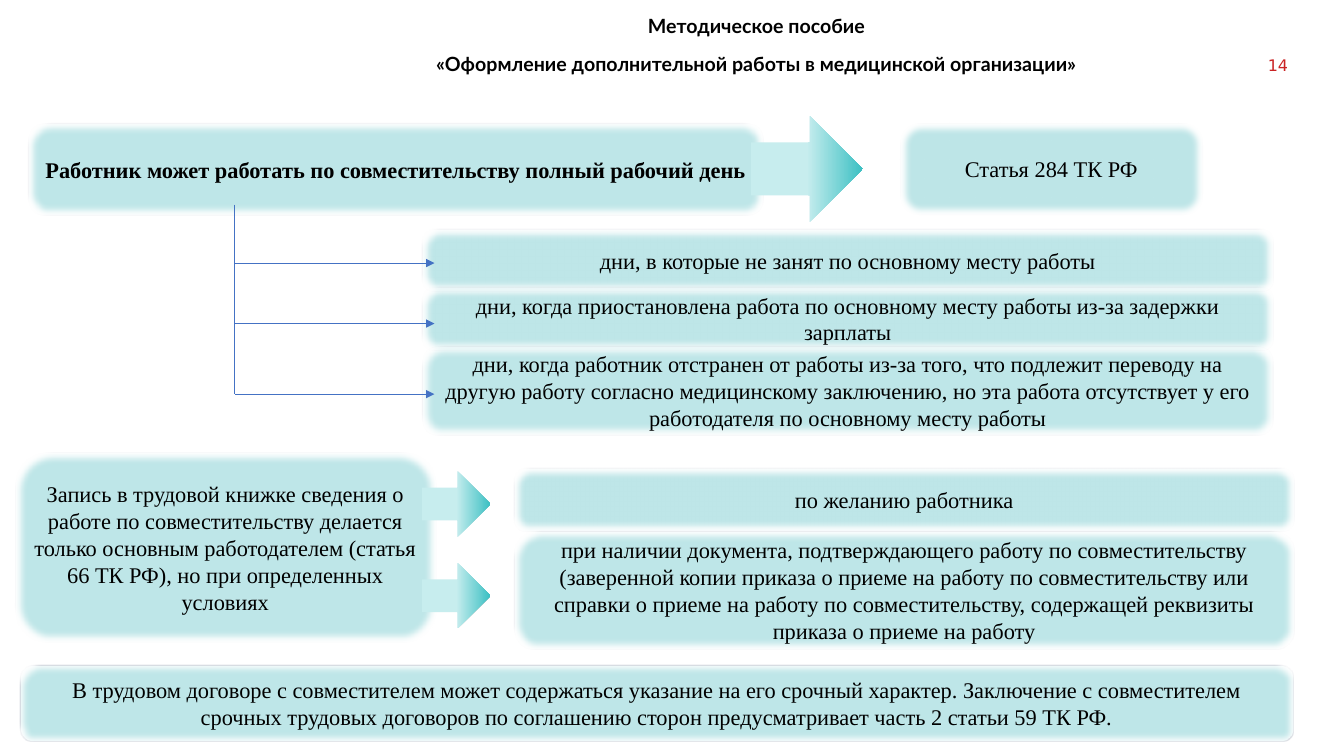
import pptx
import pptx.util
import pptx.dml.color
import pptx.enum.shapes
import pptx.enum.text
import pptx.oxml
import pptx.oxml.ns

Pt = pptx.util.Pt
Shape = pptx.enum.shapes.MSO_SHAPE
Align = pptx.enum.text.PP_ALIGN
Anchor = pptx.enum.text.MSO_ANCHOR
DAYS = [
    (163.44, 44.64, "дни, в которые не занят по основному месту работы"),
    (205.2, 44.64, "дни, когда приостановлена работа по основному месту работы из-за задержки зарплаты"),
    (247.68, 62.64, "дни, когда работник отстранен от работы из-за того, что подлежит переводу на "
     "другую работу согласно медицинскому заключению, но эта работа отсутствует у его "
     "работодателя по основному месту работы"),
]
TERMS = [
    (334.8, 44.64, "по желанию работника"),
    (379.44, 84.24, "при наличии документа, подтверждающего работу по совместительству "
     "(заверенной копии приказа о приеме на работу по совместительству или справки о приеме "
     "на работу по совместительству, содержащей реквизиты приказа о приеме на работу"),
]


def tint(code):
    return pptx.dml.color.RGBColor.from_string(code)


def node(parent, tag, **attrs):
    item = pptx.oxml.parse_xml(f"<a:{tag} {pptx.oxml.ns.nsdecls('a')}/>")
    for key, value in attrs.items():
        item.set(key, str(value))
    parent.append(item)
    return item


def write(frame, text, font="Times New Roman", size=16, color="000000", bold=False,
          align=Align.CENTER, anchor=Anchor.MIDDLE, after=0, lead=1.0, inset=None):
    frame.word_wrap = True
    frame.auto_size = pptx.enum.text.MSO_AUTO_SIZE.NONE
    frame.vertical_anchor = anchor
    if inset is not None:
        frame.margin_left = frame.margin_right = Pt(inset)
        frame.margin_top = frame.margin_bottom = Pt(inset)
    frame.text = text
    for para in frame.paragraphs:
        para.alignment = align
        para.space_before = Pt(0)
        para.space_after = Pt(after)
        para.line_spacing = lead
        for run in para.runs:
            run.font.name = font
            run.font.size = Pt(size)
            run.font.bold = bold
            run.font.color.rgb = tint(color)


class Board:
    """Draws the elements of one slide in a shared style."""

    fill, edge, wire = "BEE6E8", "1E3256", "4472C4"
    light, dark = "C7EDEE", "3BC0C3"

    def __init__(self, deck):
        self.slide = deck.slides.add_slide(deck.slide_layouts[5])
        self.shapes = self.slide.shapes

    def title(self, x, y, w, h, text, **style):
        head = self.shapes.title
        head.left, head.top, head.width, head.height = map(Pt, (x, y, w, h))
        write(head.text_frame, text, **style)

    def label(self, x, y, w, h, text, **style):
        box = self.shapes.add_textbox(*map(Pt, (x, y, w, h)))
        write(box.text_frame, text, **style)

    def panel(self, x, y, w, h, text, **style):
        box = self.shapes.add_shape(Shape.ROUNDED_RECTANGLE, *map(Pt, (x, y, w, h)))
        box.shadow.inherit = False
        box.fill.solid()
        box.fill.fore_color.rgb = tint(self.fill)
        box.line.color.rgb = tint(self.edge)
        box.line.width = Pt(1)
        glow = box._element.spPr.find(pptx.oxml.ns.qn("a:effectLst"))
        node(glow, "softEdge", rad=Pt(5))
        write(box.text_frame, text, **style)

    def arrow(self, x, y, w, h):
        mark = self.shapes.add_shape(Shape.DOWN_ARROW, *map(Pt, (x, y, w, h)))
        mark.shadow.inherit = False
        mark.rotation = 270
        mark.fill.gradient()
        mark.fill.gradient_angle = 270
        stops = zip(mark.fill.gradient_stops, (0.5, 1), (self.light, self.dark))
        for stop, place, code in stops:
            stop.position = place
            stop.color.rgb = tint(code)
        mark.line.fill.background()

    def link(self, x1, y1, x2, y2, tip=False):
        kind = pptx.enum.shapes.MSO_CONNECTOR.STRAIGHT
        line = self.shapes.add_connector(kind, *map(Pt, (x1, y1, x2, y2)))
        line.line.color.rgb = tint(self.wire)
        line.line.width = Pt(0.5)
        if tip:
            node(line.line._get_or_add_ln(), "tailEnd", type="triangle")
        node(line._element.spPr, "effectLst")


def main():
    deck = pptx.Presentation()
    deck.slide_width, deck.slide_height = Pt(960), Pt(540)
    board = Board(deck)
    board.title(222.48, 6.48, 635.76, 51.12,
                "Методическое пособие\n«Оформление дополнительной работы в медицинской организации»",
                font="Lato", size=14, bold=True, anchor=Anchor.TOP, after=10)
    board.label(897.84, 39.6, 22.32, 17.28, "14", font="DejaVu Sans", size=11.4,
                color="CA2324", align=Align.RIGHT, anchor=Anchor.TOP, inset=0)

    board.panel(20.16, 87.84, 524.88, 65.52,
                "Работник может работать по совместительству полный рабочий день",
                bold=True, lead=1.07, after=8)
    board.panel(642.96, 87.84, 216, 65.52, "Статья 284 ТК РФ")
    board.arrow(538.56, 80.64, 75.6, 79.92)

    for y, h, text in DAYS:
        board.panel(301.68, y, 607.68, h, text)
    trunk, ends = 167.76, (187.92, 231.12, 281.52)
    board.link(trunk, 146.16, trunk, ends[-1])
    for y in ends:
        board.link(trunk, y, 310.32, y, tip=True)

    board.panel(10.8, 323.28, 300.24, 135.36,
                "Запись в трудовой книжке сведения о работе по совместительству делается только "
                "основным работодателем (статья 66 ТК РФ), но при определенных условиях")
    for y in (335.52, 401.04):
        board.arrow(302.4, y, 46.8, 48.96)
    for y, h, text in TERMS:
        board.panel(367.2, y, 557.28, h, text)

    board.panel(14.4, 475.2, 909.36, 54,
                "В трудовом договоре с совместителем может содержаться указание на его срочный "
                "характер. Заключение с совместителем срочных трудовых договоров по соглашению "
                "сторон предусматривает часть 2 статьи 59 ТК РФ.")
    deck.save("out.pptx")


if __name__ == "__main__":
    main()
